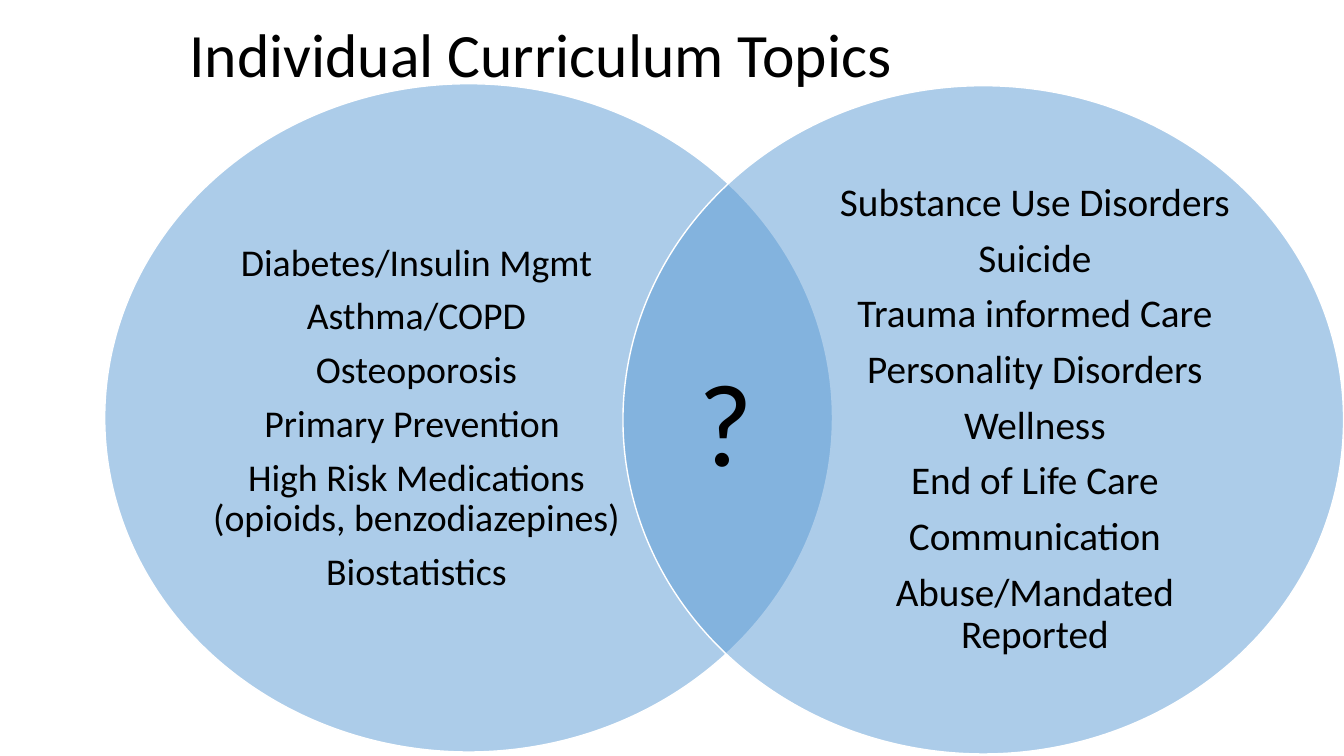
"""Build the Individual Curriculum Topics Venn slide."""
from dataclasses import dataclass

from lxml import etree
from pptx import Presentation
from pptx.dml.color import RGBColor
from pptx.enum.shapes import MSO_SHAPE
from pptx.enum.text import MSO_ANCHOR, PP_ALIGN
from pptx.oxml.ns import qn
from pptx.util import Cm, Pt

OVAL = MSO_SHAPE.OVAL
MIDDLE, TOP = MSO_ANCHOR.MIDDLE, MSO_ANCHOR.TOP
LEFT, CENTER = PP_ALIGN.LEFT, PP_ALIGN.CENTER
TITLE_ONLY = 5

TITLE = "Individual Curriculum Topics"
TITLE_BOX = (4.52, 0, 28.3, 2.92)
OVERLAP = "?"
OVERLAP_BOX = (17.35, 8.66, 2.64, 3.84)
CIRCLES = [
    {
        "oval": (2.64, 2.11, 18.34, 16.84),
        "box": (5.21, 4.11, 10.57, 12.88),
        "size": 27,
        "topics": [
            "Diabetes/Insulin Mgmt",
            "Asthma/COPD",
            "Osteoporosis",
            "Primary Prevention ",
            "High Risk Medications (opioids, benzodiazepines)",
            "Biostatistics",
        ],
    },
    {
        "oval": (15.7, 2.16, 18.16, 16.84),
        "box": (20.85, 4.14, 10.46, 12.88),
        "size": 28,
        "topics": [
            "Substance Use Disorders",
            "Suicide",
            "Trauma informed Care",
            "Personality Disorders",
            "Wellness",
            "End of Life Care",
            "Communication",
            "Abuse/Mandated Reported",
        ],
    },
]


@dataclass(frozen=True)
class Theme:
    """Hold the colours, type sizes and spacing."""

    font: str = "Calibri"
    text: RGBColor = RGBColor(0x00, 0x00, 0x00)
    circle: RGBColor = RGBColor(0x5B, 0x9B, 0xD5)
    outline: RGBColor = RGBColor(0xFF, 0xFF, 0xFF)
    opacity: int = 50
    title_size: int = 44
    overlap_size: int = 84
    line_spacing: float = 0.9
    gap_ratio: float = 0.34


THEME = Theme()


def lengths(box):
    """Convert a box in centimetres to slide lengths."""
    return [Cm(value) for value in box]


def apply(target, formats):
    """Set each format value on the target."""
    for name, value in formats.items():
        setattr(target, name, value)


def write(frame, lines, size, frame_formats, paragraph_formats):
    """Fill a text frame with one paragraph per line."""
    apply(frame, {"word_wrap": True, **frame_formats})
    for index, line in enumerate(lines):
        paragraph = frame.add_paragraph() if index else frame.paragraphs[0]
        paragraph.text = line
        apply(paragraph, paragraph_formats)
        apply(paragraph.font, {"name": THEME.font, "size": Pt(size)})
        paragraph.font.color.rgb = THEME.text


def add_circle(slide, box):
    """Add one translucent circle of the Venn diagram."""
    shape = slide.shapes.add_shape(OVAL, *lengths(box))
    shape.shadow.inherit = False
    shape.fill.solid()
    shape.fill.fore_color.rgb = THEME.circle
    color = shape.fill._xPr.find(qn("a:solidFill"))[0]
    etree.SubElement(color, qn("a:alpha"), val=str(THEME.opacity * 1000))
    shape.line.color.rgb = THEME.outline
    shape.line.width = Pt(1)


def add_topics(slide, circle):
    """Add the topic list of one circle."""
    frame = slide.shapes.add_textbox(*lengths(circle["box"])).text_frame
    margins = {f"margin_{side}": 0 for side in ("left", "top", "right", "bottom")}
    spacing = {
        "alignment": CENTER,
        "line_spacing": THEME.line_spacing,
        "space_after": Pt(circle["size"] * THEME.gap_ratio),
    }
    write(frame, circle["topics"], circle["size"],
          {"vertical_anchor": MIDDLE, **margins}, spacing)


def main():
    """Build and save the slide."""
    presentation = Presentation()
    presentation.slide_width, presentation.slide_height = Cm(33.87), Cm(19.05)
    slide = presentation.slides.add_slide(presentation.slide_layouts[TITLE_ONLY])

    title = slide.shapes.title
    apply(title, dict(zip(("left", "top", "width", "height"), lengths(TITLE_BOX))))
    write(title.text_frame, [TITLE], THEME.title_size, {"vertical_anchor": MIDDLE},
          {"alignment": LEFT, "line_spacing": THEME.line_spacing})

    for circle in CIRCLES:
        add_circle(slide, circle["oval"])
        add_topics(slide, circle)

    overlap = slide.shapes.add_textbox(*lengths(OVERLAP_BOX))
    write(overlap.text_frame, [OVERLAP], THEME.overlap_size,
          {"vertical_anchor": TOP}, {"alignment": LEFT})
    presentation.save("out.pptx")


if __name__ == "__main__":
    main()
